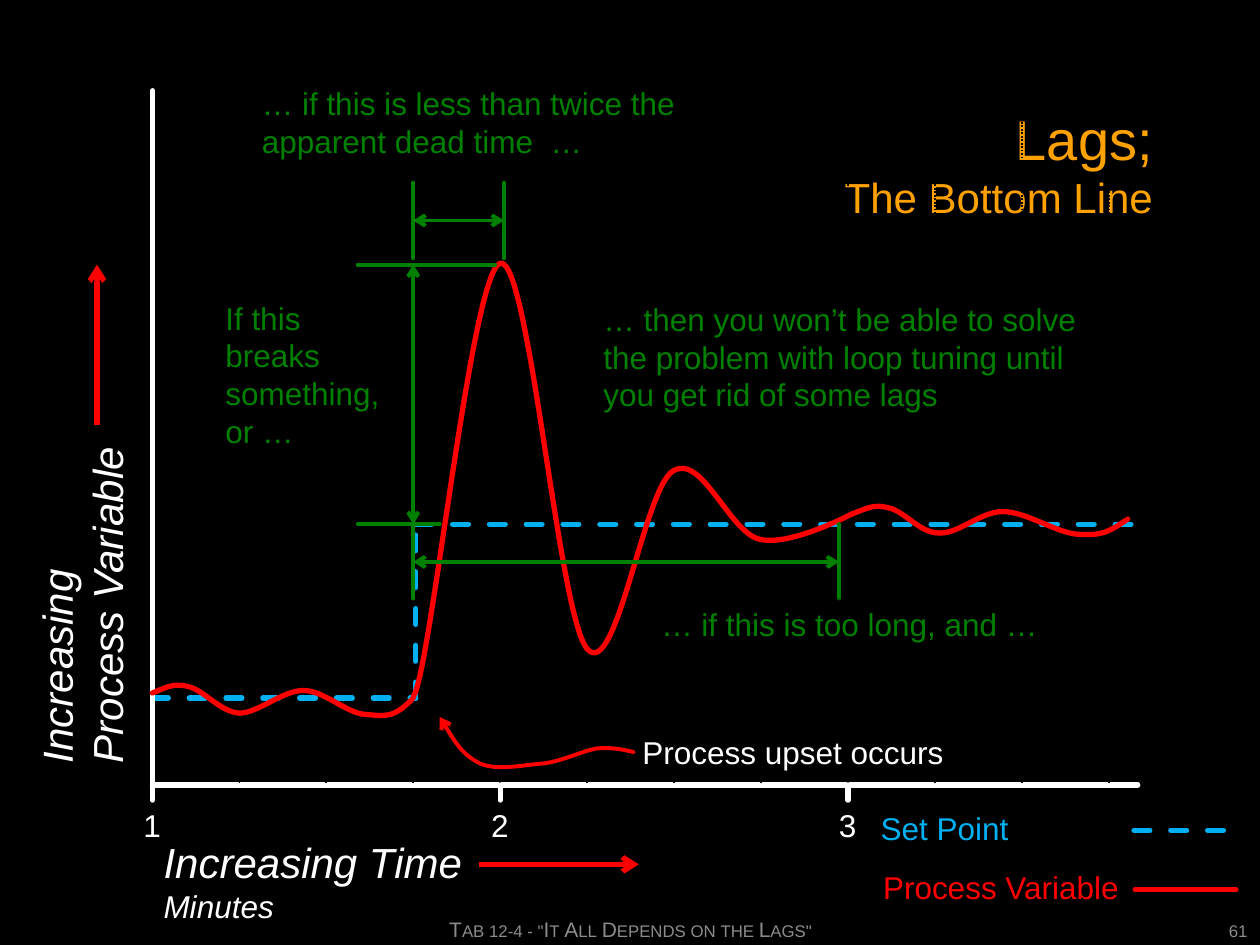
import pptx
import pptx.dml.color
import pptx.enum.dml
import pptx.enum.shapes
import pptx.enum.text
import pptx.oxml.ns
import pptx.util
from dataclasses import dataclass

Inches = pptx.util.Inches
Pt = pptx.util.Pt
ALIGN = pptx.enum.text.PP_ALIGN
ANCHOR = pptx.enum.text.MSO_ANCHOR
DASH = pptx.enum.dml.MSO_LINE
SHAPE = pptx.enum.shapes.MSO_SHAPE
qn = pptx.oxml.ns.qn


@dataclass
class Theme:
    font: str = "Arial"
    back: str = "000000"
    ink: str = "FFFFFF"
    gold: str = "FFA100"
    green: str = "008000"
    red: str = "FF0000"
    blue: str = "00B0F0"
    gray: str = "8C8C8C"
    head: int = 32
    large: int = 24
    body: int = 18
    small: int = 12
    thick: float = 3
    thin: float = 2.25


def rgb(code):
    return pptx.dml.color.RGBColor.from_string(code)


def sub(parent, tag, **attrs):
    child = parent.makeelement(qn(tag), attrs)
    parent.append(child)
    return child


def write(para, text, font="Arial", size=18, color="FFFFFF", slant=False,
          caps=False, align=ALIGN.LEFT):
    """Add one formatted run to a paragraph."""
    para.alignment = align
    run = para.add_run()
    run.text = text
    run.font.name = font
    run.font.size = Pt(size)
    run.font.italic = slant
    run.font.color.rgb = rgb(color)
    if caps:
        run.font._element.set("cap", "small")


class Deck:
    def __init__(self, theme):
        self.theme = theme
        self.file = pptx.Presentation()
        self.file.slide_width, self.file.slide_height = Inches(10), Inches(7.5)
        self.slide = self.file.slides.add_slide(self.file.slide_layouts[5])
        self.shapes = self.slide.shapes
        fill = self.slide.background.fill
        fill.solid()
        fill.fore_color.rgb = rgb(theme.back)

    def stroke(self, line, color, width, dash=None, ends="", cap="rnd"):
        line.color.rgb = rgb(color)
        line.width = Pt(width)
        if dash:
            line.dash_style = dash
        ln = line._get_or_add_ln()
        ln.set("cap", cap)
        for name in ends.split():
            sub(ln, f"a:{name}End", type="arrow")

    def line(self, x1, y1, x2, y2, color, width=3, **style):
        line = self.shapes.add_connector(
            pptx.enum.shapes.MSO_CONNECTOR.STRAIGHT,
            Inches(x1), Inches(y1), Inches(x2), Inches(y2))
        self.stroke(line.line, color, width, **style)
        sub(line._element.spPr, "a:effectLst")

    def curve(self, points, color, width=3, **style):
        """Draw a smooth curve: a start, then three points for each arc."""
        spots = [(Inches(x), Inches(y)) for x, y in points]
        maker = self.shapes.build_freeform(*spots[0], scale=1.0)
        maker.add_line_segments(spots[1:], close=False)
        shape = maker.convert_to_shape()
        shape.shadow.inherit = False
        shape.fill.background()
        self.stroke(shape.line, color, width, **style)
        # Turn each three straight steps into one Bezier arc
        track = next(shape._element.iter(qn("a:path")))
        steps = track.findall(qn("a:lnTo"))
        for i in range(0, len(steps), 3):
            arc = sub(track, "a:cubicBezTo")
            for step in steps[i:i + 3]:
                arc.append(step[0])
                track.remove(step)

    def shade(self, shape):
        shape.fill.solid()
        shape.fill.fore_color.rgb = rgb(self.theme.back)
        tint = next(shape._element.spPr.iter(qn("a:srgbClr")))
        sub(tint, "a:alpha", val="25000")

    def title(self, box, lines):
        shape = self.shapes.title
        shape.left, shape.top, shape.width, shape.height = map(Inches, box)
        self.shade(shape)
        frame = shape.text_frame
        frame.vertical_anchor = ANCHOR.MIDDLE
        para = frame.paragraphs[0]
        for i, (text, size) in enumerate(lines):
            if i:
                para.add_line_break()
            write(para, text, font=self.theme.font, size=size,
                  color=self.theme.gold, align=ALIGN.RIGHT)

    def text(self, box, lines, wrap=True, turn=0, grow=True, **form):
        shape = self.shapes.add_textbox(*map(Inches, box))
        shape.rotation = turn
        self.fill(shape, lines, wrap, grow, form)

    def note(self, box, text, color):
        shape = self.shapes.add_shape(SHAPE.RECTANGLE, *map(Inches, box))
        shape.shadow.inherit = False
        shape.line.fill.background()
        self.shade(shape)
        self.fill(shape, [(text, self.theme.body)], True, True, {"color": color})

    def fill(self, shape, lines, wrap, grow, form):
        frame = shape.text_frame
        frame.word_wrap = wrap
        frame.vertical_anchor = ANCHOR.TOP if grow else ANCHOR.MIDDLE
        if grow:
            frame.auto_size = pptx.enum.text.MSO_AUTO_SIZE.SHAPE_TO_FIT_TEXT
        for i, (text, size) in enumerate(lines):
            para = frame.add_paragraph() if i else frame.paragraphs[0]
            write(para, text, font=self.theme.font, size=size, **form)


def main():
    t = Theme()
    deck = Deck(t)
    left, right, top, base = 1.21, 9.03, 0.72, 6.23
    low, high, peak = 5.54, 4.16, 2.1
    start = 3.28
    step = 0.69

    # Time axis, its notches and its labels
    deck.line(left, base, right, base, t.ink)
    for i in range(1, 12):
        x = left + i * step
        deck.line(x, top, x, base, t.back, 1, dash=DASH.ROUND_DOT, cap="flat")
    for i in range(3):
        x = left + i * 4 * step
        deck.line(x, base, x, base + 0.12, t.ink)
        deck.text((x - 0.17, 6.35, 0.34, 0.4), [(str(i + 1), t.body)], wrap=False)
    deck.text((1.2, 6.59, 2.76, 0.81),
              [("Increasing Time", t.large), ("Minutes", t.body)], slant=True)
    deck.line(3.8, 6.86, 5.07, 6.86, t.red, ends="tail", cap="flat")

    # Value axis
    deck.text((-0.73, 4.32, 2.76, 0.91),
              [("Increasing Process Variable", t.large)], turn=270, slant=True)
    deck.line(0.77, 3.37, 0.77, peak, t.red, ends="tail", cap="flat")

    deck.title((6.4, 0.67, 2.85, 1.25),
               [("Lags;", t.head), ("The Bottom Line", t.large)])

    # Set point
    for ends in ((left, low, 3.3, low), (3.3, low, 3.3, high),
                 (3.3, high, right, high)):
        deck.line(*ends, t.blue, dash=DASH.DASH)

    # Upset callout
    deck.note((5, 5.77, 3.38, 0.4), "Process upset occurs", t.ink)
    deck.curve([(5.03, 5.97), (4.95, 5.95), (4.86, 5.93), (4.74, 5.94),
                (4.62, 5.96), (4.47, 6.04), (4.31, 6.06),
                (4.16, 6.07), (3.95, 6.12), (3.81, 6.06),
                (3.67, 5.99), (3.58, 5.84), (3.49, 5.69)],
               t.red, t.thin, ends="tail")

    # Legend
    deck.text((6.89, 6.37, 3.38, 0.4), [("Set Point", t.body)], color=t.blue)
    deck.line(9, 6.59, 9.8, 6.59, t.blue, dash=DASH.DASH)
    deck.text((6.91, 6.84, 3.38, 0.4), [("Process Variable", t.body)], color=t.red)
    deck.line(9.01, 7.06, 9.81, 7.06, t.red)

    # Process variable: before, after and during the upset
    before = [(1.21, 5.5), (1.33, 5.45), (1.38, 5.42), (1.5, 5.45),
              (1.62, 5.48), (1.75, 5.65), (1.9, 5.66),
              (2.05, 5.66), (2.24, 5.48), (2.41, 5.48),
              (2.57, 5.48), (2.75, 5.66), (2.9, 5.67),
              (3.05, 5.68), (3.12, 5.71), (3.28, 5.54)]
    after = [(6.76, 4.08), (6.89, 4.03), (6.94, 4), (7.05, 4.03),
             (7.17, 4.05), (7.3, 4.23), (7.45, 4.23),
             (7.61, 4.24), (7.78, 4.06), (7.96, 4.06),
             (8.14, 4.06), (8.39, 4.23), (8.55, 4.24),
             (8.72, 4.25), (8.78, 4.24), (8.95, 4.12)]
    swing = [(3.28, 5.53), (3.42, 5.33), (3.74, 2.16), (3.97, 2.09),
             (4.2, 2.03), (4.43, 4.88), (4.66, 5.15),
             (4.89, 5.42), (5.11, 3.88), (5.34, 3.74),
             (5.57, 3.59), (5.79, 4.23), (6.03, 4.28),
             (6.27, 4.34), (6.76, 4.08), (6.76, 4.08)]
    deck.line(left, top, left, base, t.ink)
    for points in (before, after, swing):
        deck.curve(points, t.red)

    # Green spans with arrows, then the marks that bound them
    for ends in ((start, high, start, peak), (6.66, 4.46, start, 4.46),
                 (4, 1.75, start, 1.75)):
        deck.line(*ends, t.green, t.thin, ends="head tail")
    for ends in ((2.84, peak, 3.93, peak), (2.84, high, 3.49, high),
                 (start, 4.75, start, high), (6.66, 4.75, 6.66, high),
                 (start, 2.05, start, 1.45), (4, 2.05, 4, 1.45)):
        deck.line(*ends, t.green, t.thin)

    # Green notes
    for box, text in (
            ((1.69, 2.32, 1.54, 1.31), "If this breaks something, or …"),
            ((5.15, 4.75, 3.94, 0.4), "… if this is too long, and …"),
            ((1.98, 0.62, 3.94, 0.71),
             "… if this is less than twice the apparent dead time  …"),
            ((4.69, 2.33, 4.01, 1.01),
             "… then you won’t be able to solve the problem with loop "
             "tuning until you get rid of some lags")):
        deck.note(box, text, t.green)

    # Footer
    for box, text, align in (
            ((8.33, 7.25, 1.67, 0.25), "61", ALIGN.RIGHT),
            ((1.67, 7.25, 6.67, 0.25),
             'Tab 12-4 - "It All Depends on the Lags"', ALIGN.CENTER)):
        deck.text(box, [(text, t.small)], grow=False, color=t.gray,
                  caps=True, align=align)

    deck.file.save("out.pptx")


if __name__ == "__main__":
    main()
